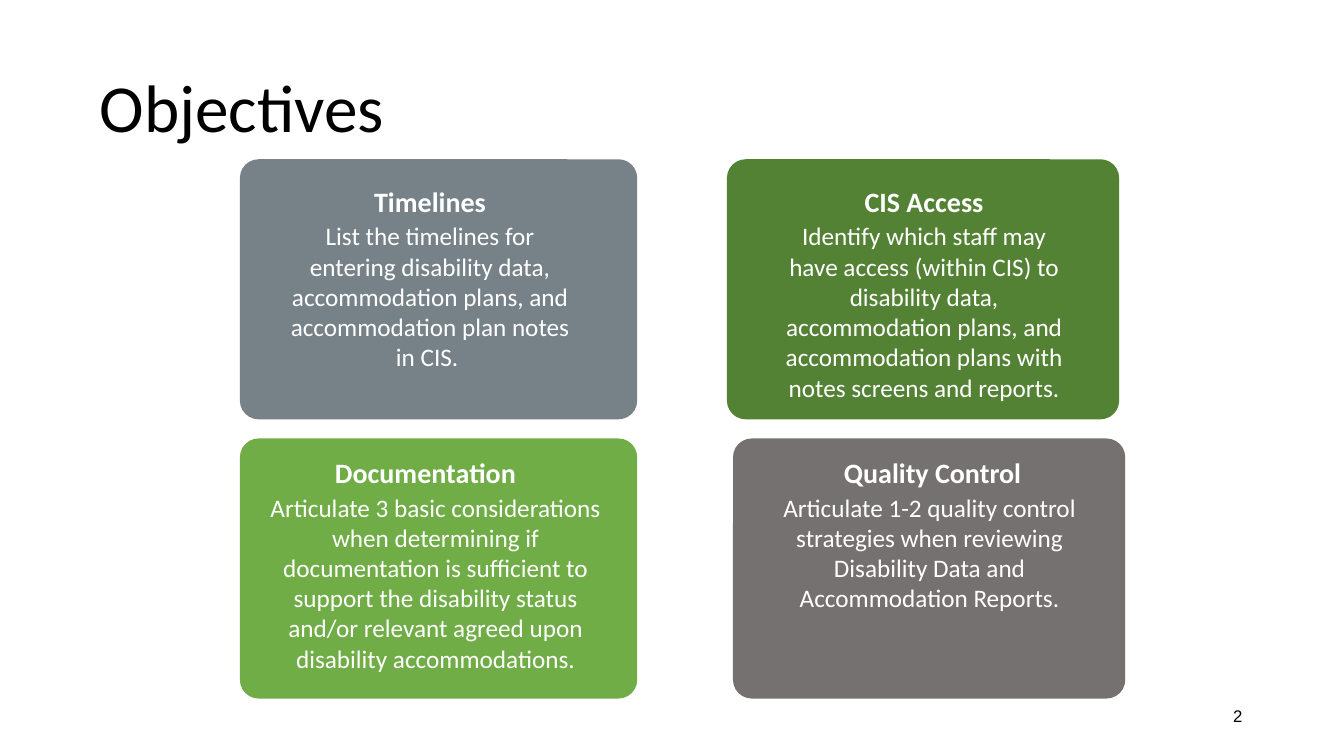
from pptx import Presentation
from pptx.dml.color import RGBColor
from pptx.enum.shapes import MSO_SHAPE
from pptx.enum.text import MSO_ANCHOR, PP_ALIGN
from pptx.util import Inches, Pt

ROUND = MSO_SHAPE.ROUNDED_RECTANGLE
TOP = MSO_ANCHOR.TOP
LEFT, CENTER, RIGHT = PP_ALIGN.LEFT, PP_ALIGN.CENTER, PP_ALIGN.RIGHT

deck = Presentation()
deck.slide_width, deck.slide_height = Inches(13.33), Inches(7.5)
slide = deck.slides.add_slide(deck.slide_layouts[6])


def color(target, code):
    target.rgb = RGBColor.from_string(code)


def write(words, box, size, align=CENTER, shade="FFFFFF", **extra):
    frame = slide.shapes.add_textbox(*map(Inches, box)).text_frame
    frame.word_wrap = True
    frame.vertical_anchor = TOP
    line = frame.paragraphs[0]
    line.alignment = align
    run = line.add_run()
    run.text = words
    style = {"name": "Calibri", "size": Pt(size), **extra}
    for key, value in style.items():
        setattr(run.font, key, value)
    color(run.font.color, shade)


# Title
write("Objectives", (0.89, 0.6, 9.9, 0.91), 48, LEFT, "000000")

# Cards: fill, left, top, width; head left, width; body left, width; words
HIGH = 2.58
cards = [
    ("768288", 2.38, 1.58, 3.94, 2.74, 3.05, 2.74, 3.05, "Timelines",
     "List the timelines for entering disability data, accommodation plans, "
     "and accommodation plan notes in CIS. "),
    ("548235", 7.21, 1.58, 3.89, 7.64, 3.05, 7.64, 3.05, "CIS Access",
     "Identify which staff may have access (within CIS) to disability data, "
     "accommodation plans, and accommodation plans with notes screens and "
     "reports."),
    ("70AD47", 2.38, 4.35, 3.94, 2.52, 3.4, 2.54, 3.56, "Documentation",
     "Articulate 3 basic considerations when determining if documentation is "
     "sufficient to support the disability status and/or relevant agreed upon "
     "disability accommodations."),
    ("767171", 7.27, 4.35, 3.89, 7.67, 3.16, 7.64, 3.16, "Quality Control",
     "Articulate 1-2 quality control strategies when reviewing Disability "
     "Data and Accommodation Reports."),
]
for fill, left, top, wide, head_x, head_w, body_x, body_w, head, body in cards:
    card = slide.shapes.add_shape(ROUND, *map(Inches, (left, top, wide, HIGH)))
    card.adjustments[0] = 0.072
    card.shadow.inherit = False
    card.fill.solid()
    color(card.fill.fore_color, fill)
    card.line.fill.background()

    # Text sits a little lower in the upper row
    head_y = 1.78 if top < 4 else 4.47
    write(head, (head_x, head_y, head_w, 0.44), 20, bold=True)
    write(body, (body_x, head_y + 0.36, body_w, 1.92), 18)

# Page number
write("2", (9.42, 6.95, 3, 0.4), 12, RIGHT, "000000", name="Arial")

deck.save("out.pptx")
